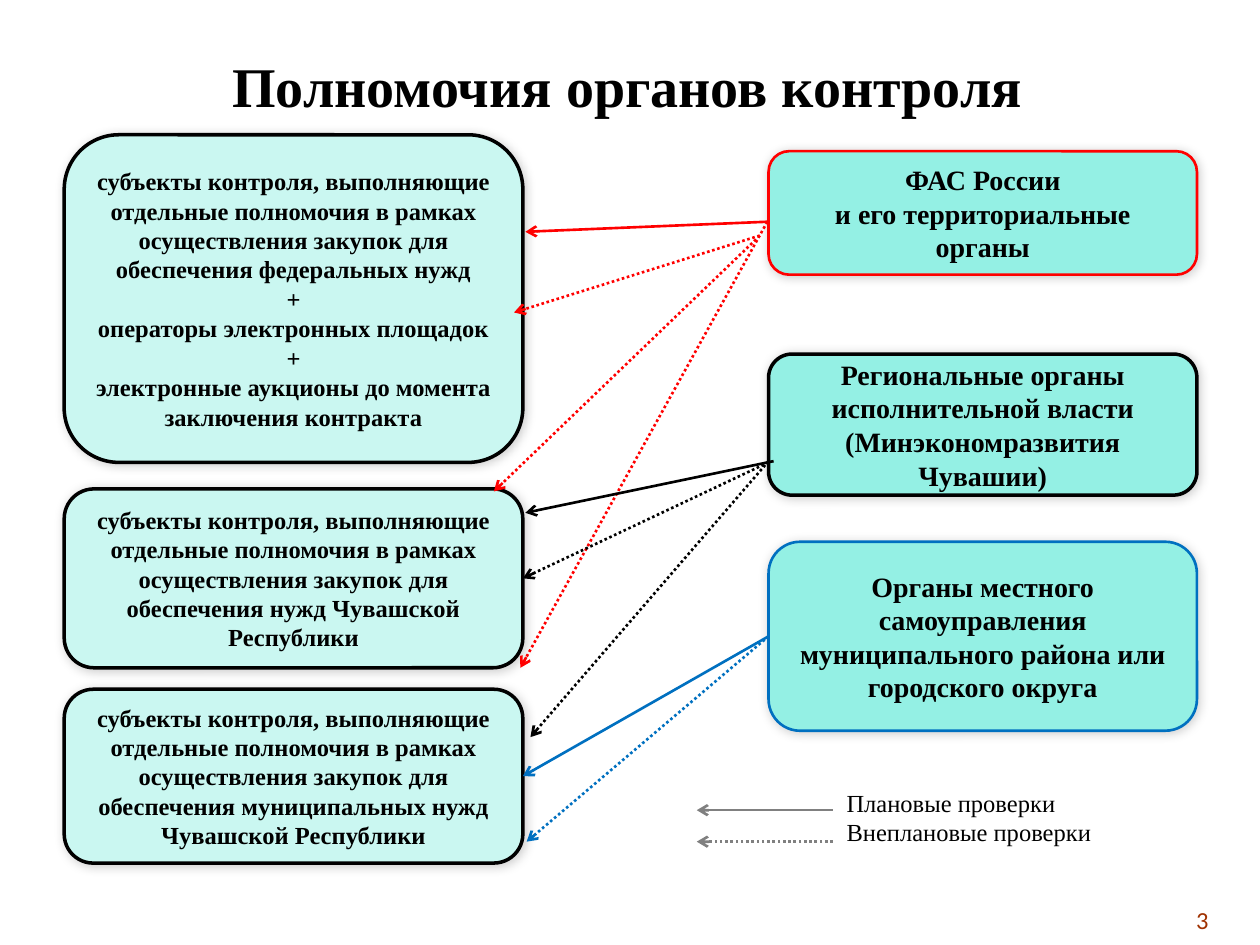
from dataclasses import dataclass

from lxml import etree
from pptx import Presentation
from pptx.dml.color import RGBColor
from pptx.enum.dml import MSO_LINE
from pptx.enum.shapes import MSO_CONNECTOR, MSO_SHAPE
from pptx.enum.text import MSO_ANCHOR, MSO_AUTO_SIZE, PP_ALIGN
from pptx.oxml.ns import qn
from pptx.util import Inches, Pt

MIDDLE = MSO_ANCHOR.MIDDLE
NO_FIT = MSO_AUTO_SIZE.NONE
LEFT, CENTER, RIGHT = PP_ALIGN.LEFT, PP_ALIGN.CENTER, PP_ALIGN.RIGHT
ROUNDED = MSO_SHAPE.ROUNDED_RECTANGLE
STRAIGHT = MSO_CONNECTOR.STRAIGHT
DOTTED = MSO_LINE.ROUND_DOT
LEFT_SIDE, RIGHT_SIDE = 1, 3


@dataclass(frozen=True)
class Theme:
    serif: str = "Times New Roman"
    sans: str = "Calibri"
    text: str = "000000"
    federal: str = "FF0000"
    regional: str = "000000"
    municipal: str = "0070C0"
    body_fill: str = "94F0E4"
    subject_fill: str = "CAF7F1"
    legend_line: str = "808080"
    page: str = "A03202"
    title_size: int = 32
    body_size: int = 16
    small_size: int = 14
    thin: float = 1.5
    thick: float = 2


@dataclass(frozen=True)
class Box:
    left: float
    top: float
    width: float
    height: float

    def inches(self):
        return [Inches(v) for v in (self.left, self.top, self.width, self.height)]

    def point(self, x, y):
        return Inches(self.left + x), Inches(self.top + y)


@dataclass(frozen=True)
class Joint:
    card: object
    side: int


THEME = Theme()


def write(frame, lines, size, align, font=THEME.serif, color=THEME.text, bold=False):
    frame.word_wrap = True
    frame.auto_size = NO_FIT
    frame.vertical_anchor = MIDDLE
    for index, line in enumerate(lines):
        paragraph = frame.paragraphs[0] if index == 0 else frame.add_paragraph()
        paragraph.text = line
        paragraph.alignment = align
        paragraph.font.name = font
        paragraph.font.size = Pt(size)
        paragraph.font.bold = bold
        paragraph.font.color.rgb = RGBColor.from_string(color)


def add_soft_shadow(shape):
    effects = etree.SubElement(shape._element.spPr, qn("a:effectLst"))
    shadow = etree.SubElement(effects, qn("a:outerShdw"), blurRad=str(Pt(6)),
                              dist=str(Pt(1)), dir="2700000", rotWithShape="0")
    color = etree.SubElement(shadow, qn("a:srgbClr"), val="000000")
    etree.SubElement(color, qn("a:alpha"), val="20000")


def add_title(slide, box):
    title = slide.shapes.title
    title.left, title.top, title.width, title.height = box.inches()
    write(title.text_frame, ["Полномочия органов контроля"], THEME.title_size, CENTER, bold=True)


def add_card(slide, box, lines, size, fill, outline, weight):
    card = slide.shapes.add_shape(ROUNDED, *box.inches())
    card.fill.solid()
    card.fill.fore_color.rgb = RGBColor.from_string(fill)
    card.line.color.rgb = RGBColor.from_string(outline)
    card.line.width = Pt(weight)
    add_soft_shadow(card)
    write(card.text_frame, lines, size, CENTER, bold=True)
    return card


def add_control_bodies(slide, box):
    rows = [
        (0, 0.98, THEME.federal, THEME.thin,
         ["ФАС России", "и его территориальные органы"]),
        (1.61, 1.12, THEME.regional, THEME.thick,
         ["Региональные органы исполнительной власти (Минэкономразвития Чувашии)"]),
        (3.1, 1.5, THEME.municipal, THEME.thin,
         ["Органы местного самоуправления", "муниципального района или городского округа"]),
    ]
    return [add_card(slide, Box(box.left, box.top + offset, box.width, height), lines,
                     THEME.body_size, THEME.body_fill, outline, weight)
            for offset, height, outline, weight, lines in rows]


def add_subjects(slide, box):
    duty = ("субъекты контроля, выполняющие отдельные полномочия в рамках "
            "осуществления закупок для обеспечения ")
    rows = [
        (0, 2.6, [duty + "федеральных нужд", "+", "операторы электронных площадок", "+",
                  "электронные аукционы до момента заключения контракта"]),
        (2.81, 1.42, [duty + "нужд Чувашской Республики"]),
        (4.4, 1.38, [duty + "муниципальных нужд Чувашской Республики"]),
    ]
    return [add_card(slide, Box(box.left, box.top + offset, box.width, height), lines,
                     THEME.small_size, THEME.subject_fill, THEME.text, THEME.thick)
            for offset, height, lines in rows]


def add_arrow(slide, box, start, end, color, planned):
    ends = [(0, 0) if isinstance(place, Joint) else box.point(*place) for place in (start, end)]
    arrow = slide.shapes.add_connector(STRAIGHT, *ends[0], *ends[1])
    if isinstance(start, Joint):
        arrow.begin_connect(start.card, start.side)
    if isinstance(end, Joint):
        arrow.end_connect(end.card, end.side)
    arrow.line.color.rgb = RGBColor.from_string(color)
    arrow.line.width = Pt(THEME.thin)
    if not planned:
        arrow.line.dash_style = DOTTED
    etree.SubElement(arrow.line._get_or_add_ln(), qn("a:tailEnd"), type="arrow")
    etree.SubElement(arrow._element.spPr, qn("a:effectLst"))


def add_checks(slide, box, bodies, subjects):
    municipal_body = Joint(bodies[2], LEFT_SIDE)
    regional_subject = Joint(subjects[1], RIGHT_SIDE)
    municipal_subject = Joint(subjects[2], RIGHT_SIDE)
    checks = [
        ((1.94, 0.69), (0.02, 0.77), THEME.federal, True),
        ((1.85, 0.83), (-0.23, 2.83), THEME.federal, False),
        ((1.94, 0.69), (-0.02, 4.23), THEME.federal, False),
        ((1.99, 2.59), (0.02, 3), THEME.regional, True),
        ((1.95, 2.59), (0.06, 4.78), THEME.regional, False),
        (municipal_body, municipal_subject, THEME.municipal, True),
        ((1.88, 0.8), (-0.07, 1.41), THEME.federal, False),
        ((1.95, 2.6), regional_subject, THEME.regional, False),
        (municipal_body, (0.03, 5.61), THEME.municipal, False),
    ]
    for start, end, color, planned in checks:
        add_arrow(slide, box, start, end, color, planned)


def add_legend(slide, box):
    sample_width = 1.08
    for y, planned in ((0.14, True), (0.39, False)):
        add_arrow(slide, box, (sample_width, y), (0, y), THEME.legend_line, planned)
    indent = sample_width + 0.01
    label_box = Box(box.left + indent, box.top, box.width - indent, box.height)
    labels = slide.shapes.add_textbox(*label_box.inches())
    write(labels.text_frame, ["Плановые проверки", "Внеплановые проверки"],
          THEME.small_size, LEFT)


def add_page_number(slide, box):
    number = slide.shapes.add_textbox(*box.inches())
    write(number.text_frame, ["3"], THEME.small_size, RIGHT, THEME.sans, THEME.page)


def main():
    deck = Presentation()
    deck.slide_width, deck.slide_height = Inches(10), Inches(7.5)
    slide = deck.slides.add_slide(deck.slide_layouts[5])
    add_title(slide, Box(0.48, 0.28, 9, 0.79))
    add_page_number(slide, Box(8.54, 7.1, 1.15, 0.4))
    bodies = add_control_bodies(slide, Box(6.1, 1.2, 3.4, 4.6))
    subjects = add_subjects(slide, Box(0.51, 1.07, 3.64, 5.78))
    add_checks(slide, Box(4.15, 1.07, 1.95, 5.78), bodies, subjects)
    add_legend(slide, Box(5.53, 6.29, 4.08, 0.39))
    deck.save("out.pptx")


if __name__ == "__main__":
    main()
